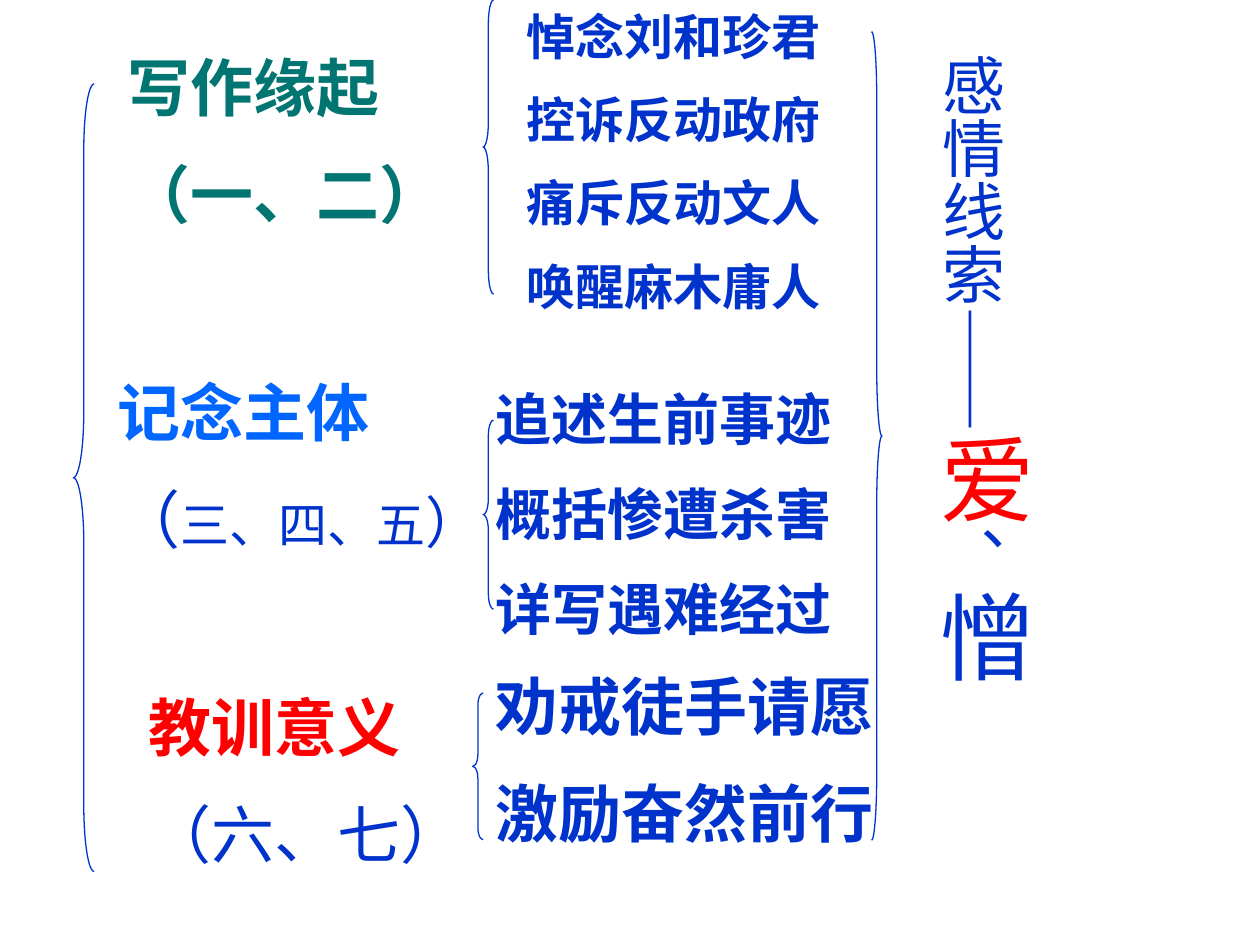
"""Build the essay structure slide with braces and a vertical emotion thread."""
import pptx
import pptx.dml.color
import pptx.enum.lang
import pptx.enum.shapes
import pptx.enum.text
import pptx.oxml.ns
import pptx.util
from lxml import etree

Cm = pptx.util.Cm
SHAPES = pptx.enum.shapes.MSO_SHAPE
FONT, DASH_FONT = "DejaVu Sans", "Noto Sans CJK SC"
BLUE, GREEN, SKY, RED = "0033CC", "007572", "0066FF", "FF0000"


def same_style(lines, size):
    return [[(line, size, BLUE, True)] for line in lines]


SECTIONS = [
    ((2.33, 0.85, 7.2, 4.04), [
        [("写作缘起", 36, GREEN, True)],
        [("（一、二）", 36, GREEN, True)]]),
    ((2.12, 7.41, 9.95, 4.04), [
        [("记念主体", 36, SKY, True)],
        [("（", 36, BLUE, False), ("三、四、五", 28, BLUE, False), ("）", 32, BLUE, False)]]),
    ((2.75, 13.76, 10.37, 4.04), [
        [("教训意义", 36, RED, True)],
        [("（六、七）", 36, BLUE, False)]]),
]
DETAILS = [
    ((10.37, 0, 15.03, 6.8),
     same_style(["悼念刘和珍君", "控诉反动政府", "痛斥反动文人", "唤醒麻木庸人"], 28)),
    ((9.74, 7.62, 12.49, 5.67),
     same_style(["追述生前事迹", "概括惨遭杀害", "详写遇难经过"], 32)),
    ((9.74, 13.34, 9.31, 4.04),
     same_style(["劝戒徒手请愿", "激励奋然前行"], 36)),
]
THREAD = ((18.42, 0.85, 2.7, 17.57), [
    [("感情线索", 36, BLUE, False), ("——", 36, BLUE, False), ("爱", 54, RED, False),
     ("、", 36, BLUE, False), ("憎", 54, BLUE, False)]])
BRACES = [
    (SHAPES.LEFT_BRACE, (1.48, 1.69, 0.42, 15.88)),
    (SHAPES.LEFT_BRACE, (9.74, 0, 0.21, 5.93)),
    (SHAPES.LEFT_BRACE, (9.74, 8.47, 0.21, 3.81)),
    (SHAPES.LEFT_BRACE, (9.53, 13.97, 0.21, 2.96)),
    (SHAPES.RIGHT_BRACE, (17.57, 0.64, 0.21, 16.3)),
]


def color(value):
    return pptx.dml.color.RGBColor.from_string(value)


def add_text(s, box, lines, vertical=False):
    tf = s.shapes.add_textbox(*map(Cm, box)).text_frame
    tf.word_wrap = True
    tf.auto_size = pptx.enum.text.MSO_AUTO_SIZE.SHAPE_TO_FIT_TEXT
    if vertical:
        tf._txBody.bodyPr.set("vert", "eaVert")
    for i, runs in enumerate(lines):
        p = tf.add_paragraph() if i else tf.paragraphs[0]
        if i:
            p.space_before = pptx.util.Pt(runs[0][1] / 2)
        for text, size, fill, bold in runs:
            r = p.add_run()
            r.text = text
            r.font.size = pptx.util.Pt(size)
            r.font.bold = bold
            r.font.color.rgb = color(fill)
            r.font.name = FONT
            r.font.language_id = pptx.enum.lang.MSO_LANGUAGE_ID.SIMPLIFIED_CHINESE
            ea = etree.SubElement(r._r.get_or_add_rPr(), pptx.oxml.ns.qn("a:ea"))
            ea.set("typeface", DASH_FONT if text == "——" else FONT)


def add_brace(s, kind, box):
    sp = s.shapes.add_shape(kind, *map(Cm, box))
    sp.adjustments[0] = box[3] / box[2] / 12
    sp.shadow.inherit = False
    sp.fill.background()
    sp.line.color.rgb = color(BLUE)
    sp.line.width = pptx.util.Pt(0.75)


def main():
    prs = pptx.Presentation()
    prs.slide_width, prs.slide_height = Cm(25.4), Cm(19.05)
    s = prs.slides.add_slide(prs.slide_layouts[6])
    for box, lines in SECTIONS + DETAILS:
        add_text(s, box, lines)
    for kind, box in BRACES:
        add_brace(s, kind, box)
    add_text(s, *THREAD, vertical=True)
    prs.save("out.pptx")


if __name__ == "__main__":
    main()
